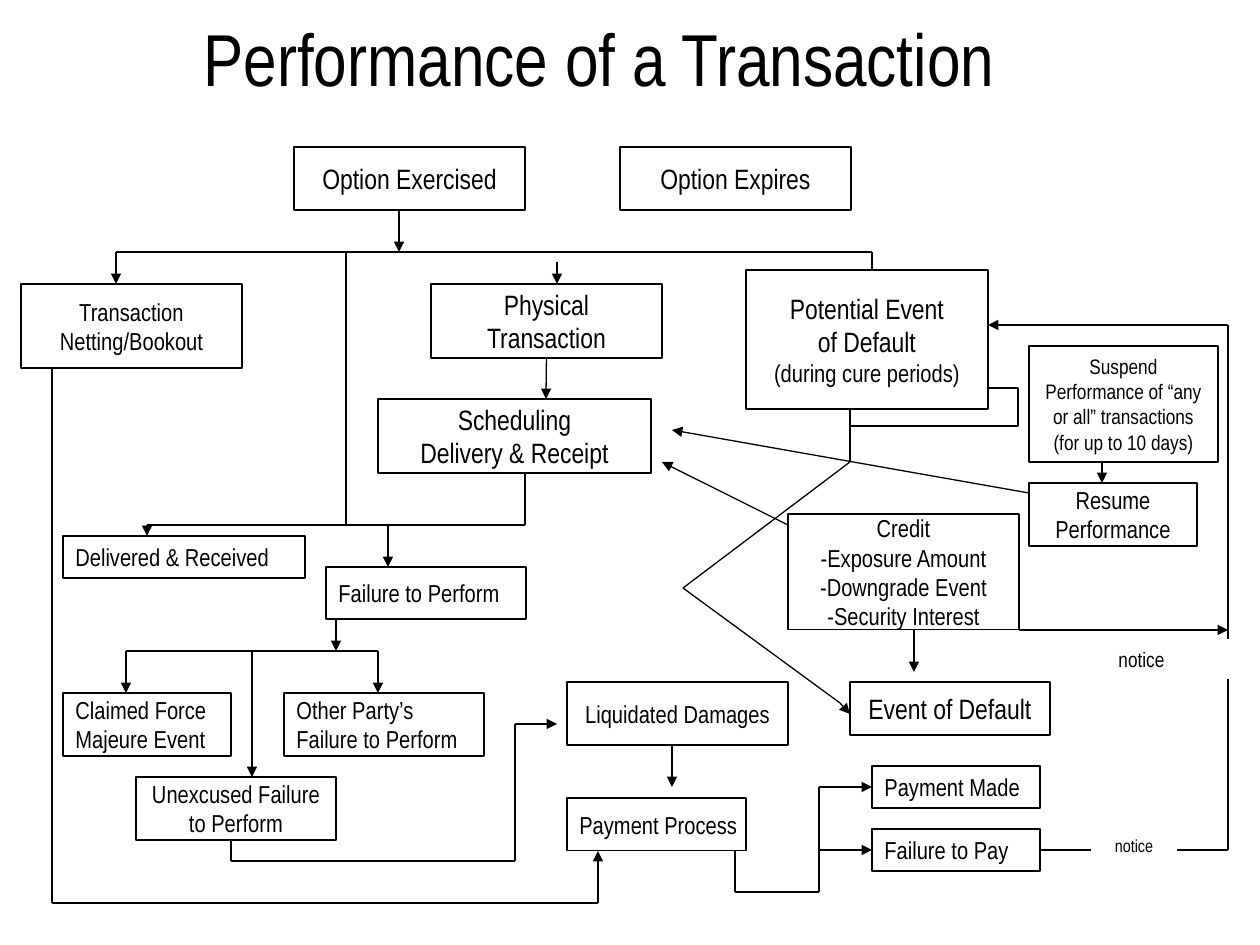
"""Build a flowchart slide on the performance of a transaction."""
from dataclasses import dataclass

from lxml.etree import SubElement
from pptx import Presentation
from pptx.dml.color import RGBColor
from pptx.enum.shapes import MSO_CONNECTOR, MSO_SHAPE
from pptx.enum.text import MSO_ANCHOR, MSO_AUTO_SIZE, PP_ALIGN
from pptx.oxml.ns import qn
from pptx.util import Emu, Pt


@dataclass(frozen=True)
class Theme:
    font: str = "Arial Narrow"
    ink: RGBColor = RGBColor(0, 0, 0)
    paper: RGBColor = RGBColor(255, 255, 255)
    title: int = 42
    large: int = 16
    medium: int = 14
    small: int = 12
    tiny: int = 10
    line: float = 0.75


THEME = Theme()
SCALE = 914400 // 126
SLIDE_SIZE = (1260, 945)
CENTER, LEFT = PP_ALIGN.CENTER, PP_ALIGN.LEFT

TITLE = ("Performance of a Transaction", (179, 0, 840, 126))

BOXES = [
    ((850, 388, 168, 38), [], THEME.small, CENTER),
    ((294, 147, 231, 63), ["Option Exercised"], THEME.large, CENTER),
    ((620, 147, 231, 63), ["Option Expires"], THEME.large, CENTER),
    ((21, 284, 221, 84), ["Transaction", "Netting/Bookout"], THEME.medium, CENTER),
    ((431, 284, 231, 74), ["Physical", "Transaction"], THEME.large, CENTER),
    ((746, 270, 242, 139), ["Potential Event", "of Default", ("(during cure periods)", THEME.medium)],
     THEME.large, CENTER),
    ((378, 399, 273, 74), ["Scheduling", "Delivery & Receipt"], THEME.large, CENTER),
    ((1029, 346, 189, 116), ["Suspend", "Performance of “any", "or all” transactions", "(for up to 10 days)"],
     THEME.small, CENTER),
    ((1029, 483, 168, 63), ["Resume", "Performance"], THEME.medium, CENTER),
    ((788, 514, 231, 116), ["Credit", "-Exposure Amount", "-Downgrade Event", "-Security Interest"],
     THEME.medium, CENTER),
    ((63, 536, 242, 42), ["Delivered & Received"], THEME.medium, LEFT),
    ((326, 567, 200, 52), ["Failure to Perform"], THEME.medium, LEFT),
    ((63, 693, 168, 63), ["Claimed Force", "Majeure Event"], THEME.medium, LEFT),
    ((284, 693, 200, 63), ["Other Party’s", "Failure to Perform"], THEME.medium, LEFT),
    ((136, 777, 200, 63), ["Unexcused Failure", "to Perform"], THEME.medium, CENTER),
    ((567, 682, 221, 63), ["Liquidated Damages"], THEME.medium, CENTER),
    ((567, 798, 179, 53), ["Payment Process"], THEME.medium, LEFT),
    ((850, 682, 200, 53), ["Event of Default"], THEME.large, CENTER),
    ((872, 766, 168, 42), ["Payment Made"], THEME.medium, LEFT),
    ((872, 829, 168, 42), ["Failure to Pay"], THEME.medium, LEFT),
]

NOTICES = [
    ((1039, 640, 205, 38), ["notice"], THEME.small, CENTER),
    ((1092, 829, 84, 34), ["notice"], THEME.tiny, CENTER),
]

ARROWS = [
    [(399, 210), (399, 252)],
    [(872, 252), (116, 252), (116, 284)],
    [(557, 262), (557, 284)],
    [(546, 358), (546, 399)],
    [(525, 473), (525, 525), (147, 525), (147, 536)],
    [(388, 525), (388, 567)],
    [(336, 619), (336, 651)],
    [(378, 651), (126, 651), (126, 693)],
    [(378, 651), (378, 693)],
    [(252, 651), (252, 777)],
    [(231, 840), (231, 861), (515, 861), (515, 724), (557, 724)],
    [(672, 745), (672, 787)],
    [(52, 368), (52, 903), (598, 903), (598, 851)],
    [(735, 851), (735, 892), (819, 892), (819, 787), (872, 787)],
    [(819, 850), (872, 850)],
    [(1040, 850), (1228, 850), (1228, 325), (988, 325)],
    [(1102, 462), (1102, 483)],
    [(1029, 493), (672, 430)],
    [(788, 525), (662, 462)],
    [(914, 630), (914, 672)],
    [(1019, 630), (1228, 630)],
    [(850, 409), (850, 462), (683, 588), (840, 703), (850, 714)],
]

LINES = [
    [(872, 252), (872, 270)],
    [(346, 252), (346, 525)],
]


def emu(*lengths):
    return [Emu(length * SCALE) for length in lengths]


def write_text(shape, lines, size, align=CENTER, spacing=None):
    frame = shape.text_frame
    frame.auto_size = MSO_AUTO_SIZE.NONE
    frame.word_wrap = False
    frame.vertical_anchor = MSO_ANCHOR.MIDDLE
    for index, line in enumerate(lines):
        text, line_size = line if isinstance(line, tuple) else (line, size)
        paragraph = frame.add_paragraph() if index else frame.paragraphs[0]
        paragraph.alignment = align
        paragraph.line_spacing = spacing
        run = paragraph.add_run()
        run.text = text
        run.font.name = THEME.font
        run.font.size = Pt(line_size)
        run.font.color.rgb = THEME.ink


def add_box(slide, place, lines, size, align, outline=THEME.ink):
    shape = slide.shapes.add_shape(MSO_SHAPE.RECTANGLE, *emu(*place))
    shape.shadow.inherit = False
    shape.fill.solid()
    shape.fill.fore_color.rgb = THEME.paper
    shape.line.color.rgb = outline
    shape.line.width = Pt(THEME.line)
    write_text(shape, lines, size, align=align)
    return shape


def find_site(point, boxes):
    for place, shape in boxes:
        left, top, width, height = place
        middle, center = left + width / 2, top + height / 2
        sites = [(middle, top), (left, center), (middle, top + height), (left + width, center)]
        for site, (x, y) in enumerate(sites):
            if abs(x - point[0]) <= 1 and abs(y - point[1]) <= 1:
                return shape, site
    return None


def add_segment(slide, start, end, boxes, arrow=False):
    connector = slide.shapes.add_connector(MSO_CONNECTOR.STRAIGHT, *emu(*start, *end))
    connector.line.color.rgb = THEME.ink
    connector.line.width = Pt(THEME.line)
    if arrow:
        SubElement(connector.line._get_or_add_ln(), qn("a:tailEnd"), type="triangle")
    SubElement(connector._element.spPr, qn("a:effectLst"))
    for point, connect in ((start, connector.begin_connect), (end, connector.end_connect)):
        joint = find_site(point, boxes)
        if joint:
            connect(*joint)


def add_route(slide, points, boxes, arrow):
    segments = list(zip(points, points[1:]))
    for number, (start, end) in enumerate(segments, 1):
        add_segment(slide, start, end, boxes, arrow=arrow and number == len(segments))


def main():
    presentation = Presentation()
    presentation.slide_width, presentation.slide_height = emu(*SLIDE_SIZE)
    slide = presentation.slides.add_slide(presentation.slide_layouts[5])

    title_text, title_place = TITLE
    title = slide.shapes.title
    title.left, title.top, title.width, title.height = emu(*title_place)
    write_text(title, [title_text], THEME.title, spacing=0.9)

    boxes = [(box[0], add_box(slide, *box)) for box in BOXES]
    for points in LINES:
        add_route(slide, points, boxes, arrow=False)
    for points in ARROWS:
        add_route(slide, points, boxes, arrow=True)
    for notice in NOTICES:
        add_box(slide, *notice, outline=THEME.paper)

    presentation.save("out.pptx")


if __name__ == "__main__":
    main()
